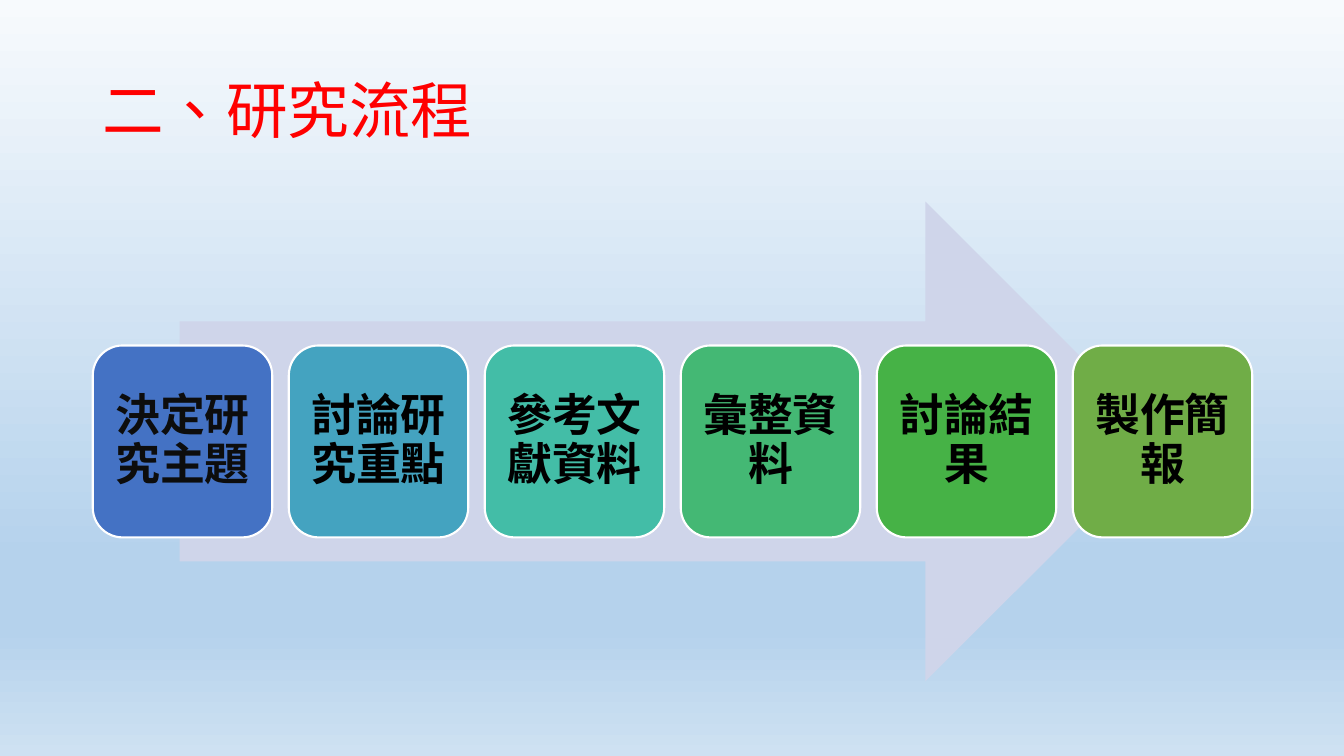
import pptx
import pptx.util
import pptx.dml.color
import pptx.enum.dml
import pptx.enum.lang
import pptx.enum.shapes
import pptx.enum.text
import pptx.oxml
import pptx.oxml.ns

Inches = pptx.util.Inches
Pt = pptx.util.Pt
RGBColor = pptx.dml.color.RGBColor
SHAPE = pptx.enum.shapes.MSO_SHAPE
ALIGN = pptx.enum.text.PP_ALIGN

RED = RGBColor(0xFF, 0x00, 0x00)
WHITE = RGBColor(0xFF, 0xFF, 0xFF)
BLACK = RGBColor(0x00, 0x00, 0x00)
INK = RGBColor(0x0D, 0x0D, 0x0D)
PALE = RGBColor(0xCF, 0xD5, 0xEA)
SKY = [
    (0, RGBColor(0xF7, 0xFA, 0xFD)),
    (74, RGBColor(0xB5, 0xD2, 0xEC)),
    (83, RGBColor(0xB5, 0xD2, 0xEC)),
    (100, RGBColor(0xCE, 0xE1, 0xF2)),
]
STEPS = [
    ("決定研究主題", RGBColor(0x44, 0x72, 0xC4), INK),
    ("討論研究重點", RGBColor(0x44, 0xA3, 0xC0), BLACK),
    ("參考文獻資料", RGBColor(0x43, 0xBD, 0xA7), BLACK),
    ("彙整資料", RGBColor(0x44, 0xB8, 0x74), BLACK),
    ("討論結果", RGBColor(0x46, 0xB2, 0x46), BLACK),
    ("製作簡報", RGBColor(0x70, 0xAD, 0x47), BLACK),
]
FONT = {
    "name": "Calibri",
    "language_id": pptx.enum.lang.MSO_LANGUAGE_ID.TRADITIONAL_CHINESE,
}
FRAME = {
    "word_wrap": True,
    "auto_size": pptx.enum.text.MSO_AUTO_SIZE.NONE,
    "vertical_anchor": pptx.enum.text.MSO_ANCHOR.MIDDLE,
}


def style(item, form):
    for key, value in form.items():
        setattr(item, key, value)


def write(shape, text, align, color, font, frame):
    body = shape.text_frame
    body.text = text
    style(body, FRAME | frame)
    para = body.paragraphs[0]
    style(para, {"alignment": align, "line_spacing": 0.9})
    run = para.runs[0]
    style(run.font, FONT | font)
    run.font.color.rgb = color


def draw(slide, kind, box, fill):
    shape = slide.shapes.add_shape(kind, *map(Inches, box))
    shape.shadow.inherit = False
    shape.fill.solid()
    shape.fill.fore_color.rgb = fill
    shape.line.fill.background()
    return shape


def paint(slide):
    """Fill the background with a top-to-bottom gradient."""
    fill = slide.background.fill
    fill.gradient()
    fill.gradient_angle = 270
    stops = slide.background._cSld.find(".//" + pptx.oxml.ns.qn("a:gsLst"))
    for stop in list(stops):
        stops.remove(stop)
    for place, color in SKY:
        stops.append(pptx.oxml.parse_xml(
            f'<a:gs {pptx.oxml.ns.nsdecls("a")} pos="{place * 1000}">'
            f'<a:srgbClr val="{color}"/></a:gs>'))


def head(slide, box):
    """Place the title."""
    title = slide.shapes.title
    style(title, dict(zip(("left", "top", "width", "height"), map(Inches, box))))
    write(title, "二、研究流程", ALIGN.LEFT, RED, {"size": Pt(44)}, {})


def flow(slide, box):
    """Place the arrow and the row of steps in front of it."""
    left, top, width, height = box

    # Arrow behind the steps
    inset = width * 0.075
    draw(slide, SHAPE.RIGHT_ARROW,
         (left + inset, top, width - 2 * inset, height), PALE)

    # Steps, evenly spread over the full width
    wide, tall = 1.78, height * 0.4
    pitch = (width - wide) / (len(STEPS) - 1)
    pads = dict.fromkeys(
        ("margin_left", "margin_right", "margin_top", "margin_bottom"), Inches(0.12))
    for i, (text, fill, ink) in enumerate(STEPS):
        place = (left + i * pitch, top + (height - tall) / 2, wide, tall)
        step = draw(slide, SHAPE.ROUNDED_RECTANGLE, place, fill)
        step.line.color.rgb = WHITE
        step.line.width = Pt(1.5)
        write(step, text, ALIGN.CENTER, ink, {"size": Pt(32), "bold": True}, pads)


def main():
    deck = pptx.Presentation()
    style(deck, {"slide_width": Inches(13.33), "slide_height": Inches(7.5)})
    slide = deck.slides.add_slide(deck.slide_layouts[5])
    paint(slide)
    head(slide, (0.92, 0.4, 11.5, 1.45))
    flow(slide, (0.92, 2, 11.5, 4.76))
    deck.save("out.pptx")


if __name__ == "__main__":
    main()
